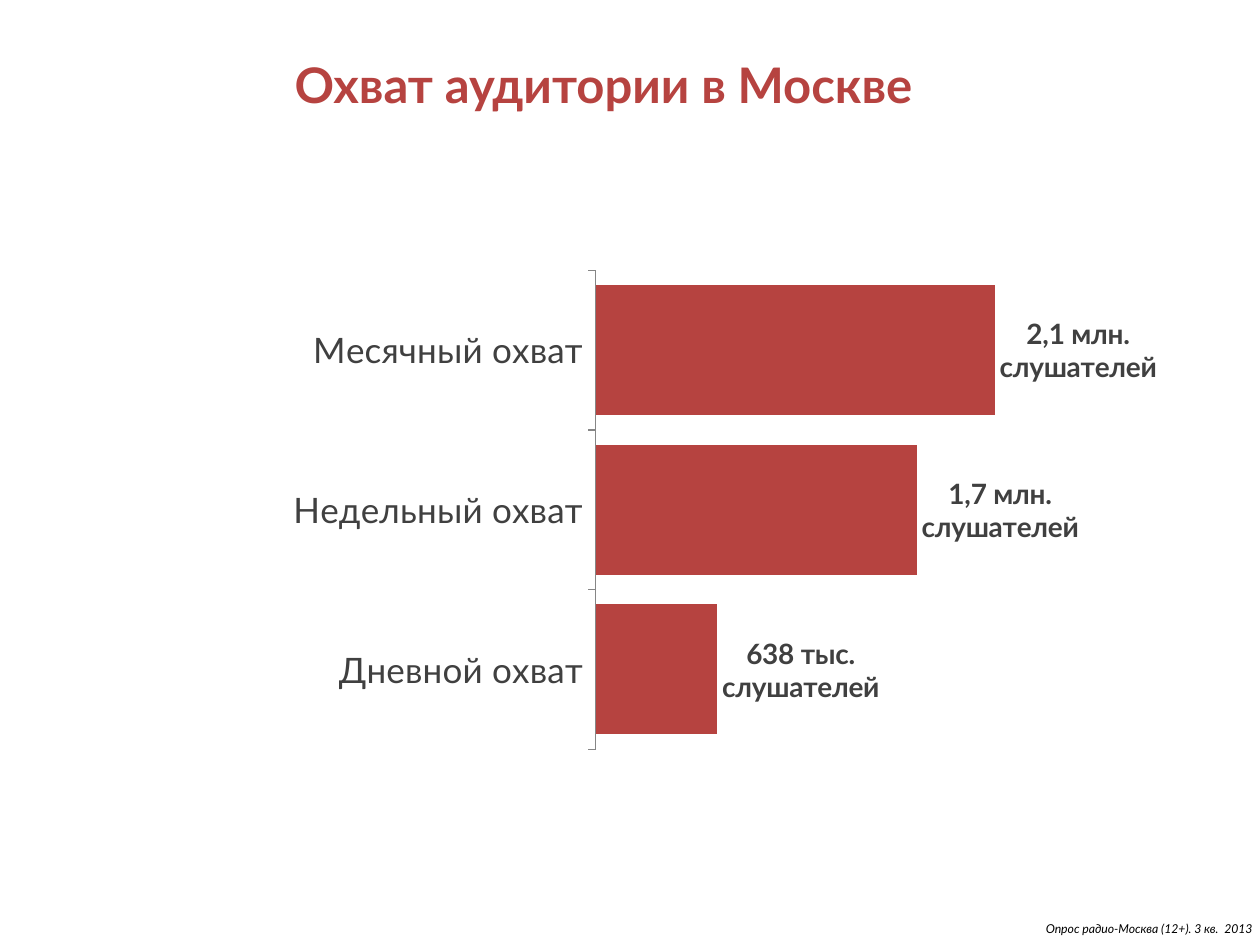
from dataclasses import dataclass

import lxml.etree
import pptx
import pptx.chart.data
import pptx.dml.color
import pptx.enum.chart
import pptx.enum.text
import pptx.oxml
import pptx.oxml.ns
import pptx.util

EMU_PER_PX = 914400 / 126
FONT = "Lato"
RED = "B64340"
DARK = "404040"
NUMBER_FORMAT = '_-* #,##0_р_._-;\\-* #,##0_р_._-;_-* "-"?'


@dataclass
class Box:
    left: int
    top: int
    width: int
    height: int

    def emu(self) -> list[int]:
        return [px(v) for v in (self.left, self.top, self.width, self.height)]


@dataclass
class Reach:
    category: str
    listeners: int
    label: str


REACHES = [
    Reach("Дневной охват", 638150, "638 тыс.\nслушателей"),
    Reach("Недельный охват", 1684490, "1,7 млн.\nслушателей"),
    Reach("Месячный охват", 2093560, "2,1 млн.\nслушателей"),
]


def px(value: int) -> int:
    return round(value * EMU_PER_PX)


def rgb(value: str) -> pptx.dml.color.RGBColor:
    return pptx.dml.color.RGBColor.from_string(value)


def style(font, size: int, color: str, bold: bool = False, italic: bool = False) -> None:
    font.name = FONT
    font.size = pptx.util.Pt(size)
    font.bold = bold
    font.italic = italic
    font.color.rgb = rgb(color)


def add_title(s, box: Box, text: str) -> None:
    sp = s.shapes.title
    sp.left, sp.top, sp.width, sp.height = box.emu()
    tf = sp.text_frame
    tf.text = text
    tf.vertical_anchor = pptx.enum.text.MSO_ANCHOR.MIDDLE
    p = tf.paragraphs[0]
    p.alignment = pptx.enum.text.PP_ALIGN.LEFT
    style(p.runs[0].font, 28, RED, bold=True)


def add_source(s, box: Box, text: str) -> None:
    tf = s.shapes.add_textbox(*box.emu()).text_frame
    tf.word_wrap = True
    tf.text = text
    p = tf.paragraphs[0]
    p.alignment = pptx.enum.text.PP_ALIGN.RIGHT
    style(p.runs[0].font, 7, "000000", italic=True)


def set_plot_area(chart, x: float, y: float, w: float, h: float) -> None:
    plot_area = chart.element.find(".//" + pptx.oxml.ns.qn("c:plotArea"))
    for old in plot_area.findall(pptx.oxml.ns.qn("c:layout")):
        plot_area.remove(old)
    layout = lxml.etree.Element(pptx.oxml.ns.qn("c:layout"))
    manual = lxml.etree.SubElement(layout, pptx.oxml.ns.qn("c:manualLayout"))
    settings = {"layoutTarget": "inner", "xMode": "edge", "yMode": "edge",
                "x": x, "y": y, "w": w, "h": h}
    for name, value in settings.items():
        lxml.etree.SubElement(manual, pptx.oxml.ns.qn(f"c:{name}")).set("val", str(value))
    plot_area.insert(0, layout)


def add_label(point, text: str) -> None:
    label = point.data_label
    tf = label.text_frame
    tf.text = text
    for p in tf.paragraphs:
        for r in p.runs:
            style(r.font, 16, DARK, bold=True)
    label.position = pptx.enum.chart.XL_LABEL_POSITION.OUTSIDE_END


def add_reach_chart(s, box: Box, reaches: list[Reach]) -> None:
    data = pptx.chart.data.CategoryChartData(number_format=NUMBER_FORMAT)
    data.categories = [reach.category for reach in reaches]
    data.add_series("Series 1", [reach.listeners for reach in reaches])
    kind = pptx.enum.chart.XL_CHART_TYPE.BAR_CLUSTERED
    chart = s.shapes.add_chart(kind, *box.emu(), data).chart
    chart.has_legend = False
    chart.has_title = False
    chart.font.name = "Quicksand"
    chart.font.size = pptx.util.Pt(18)
    chart.font.color.rgb = rgb("000000")
    set_plot_area(chart, 0.37, 0.03, 0.5, 0.93)

    axis = chart.category_axis
    axis.major_tick_mark = pptx.enum.chart.XL_TICK_MARK.OUTSIDE
    axis.format.line.color.rgb = rgb("868686")
    style(axis.tick_labels.font, 20, DARK)
    axis = chart.value_axis
    axis.visible = False
    axis.has_major_gridlines = False
    axis.minimum_scale = 0
    axis.maximum_scale = 2500000

    plot = chart.plots[0]
    plot.vary_by_categories = False
    plot.gap_width = 23
    plot.overlap = 6
    series = plot.series[0]
    series.format.fill.solid()
    series.format.fill.fore_color.rgb = rgb(RED)
    labels = series.data_labels
    labels.show_value = True
    labels.number_format = NUMBER_FORMAT
    labels.number_format_is_linked = False
    style(labels.font, 16, DARK, bold=True)
    for i, reach in enumerate(reaches):
        add_label(series.points[i], reach.label)


def main() -> None:
    prs = pptx.Presentation()
    prs.slide_width, prs.slide_height = px(1260), px(945)
    s = prs.slides.add_slide(prs.slide_layouts[5])
    add_title(s, Box(282, 16, 963, 135), "Охват аудитории в Москве")
    add_source(s, Box(775, 915, 490, 28), "Опрос радио-Москва (12+). 3 кв.  2013")
    add_reach_chart(s, Box(243, 255, 953, 515), REACHES)
    prs.save("out.pptx")


if __name__ == "__main__":
    main()
